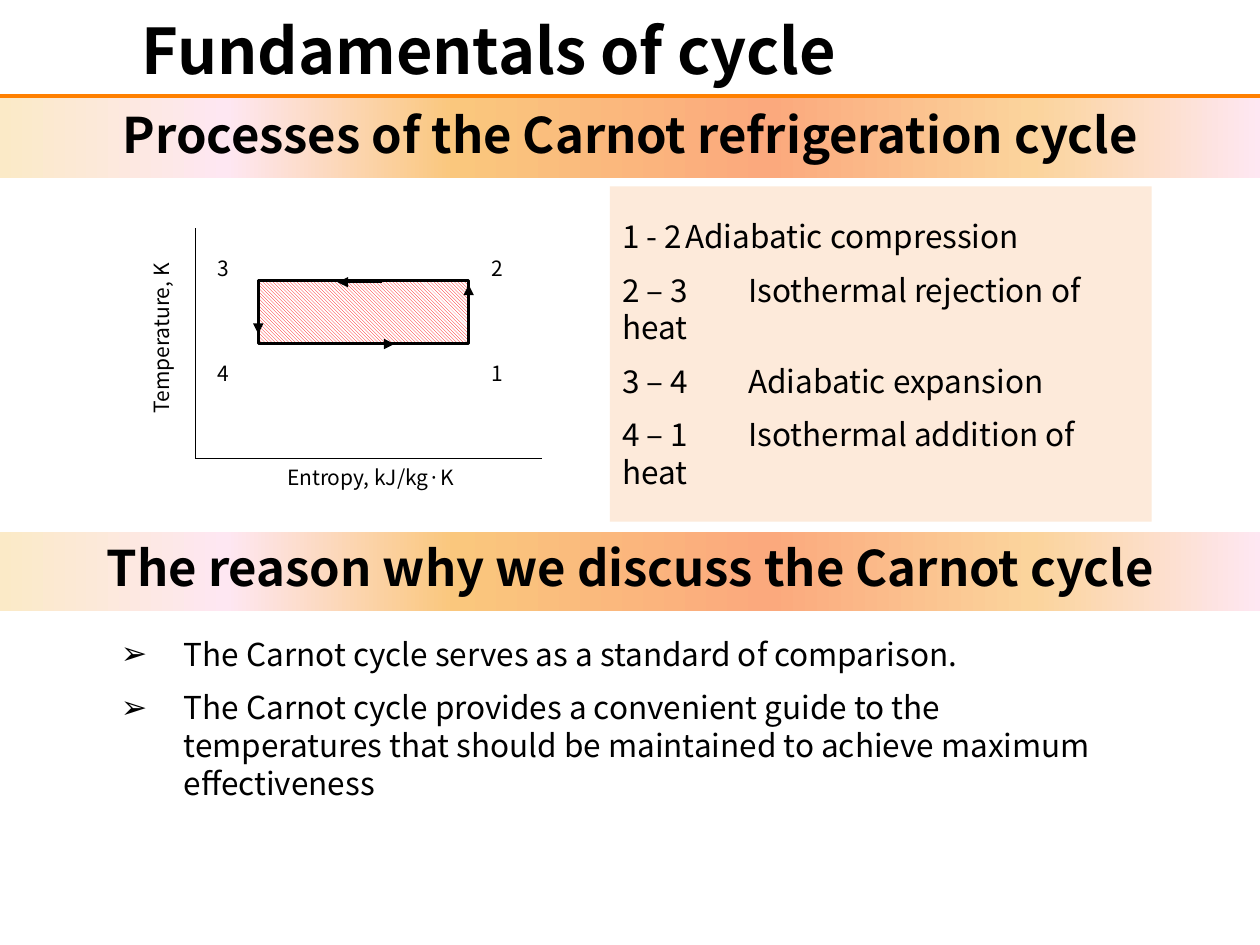
from lxml.etree import SubElement as Sub
from pptx import Presentation
from pptx.dml.color import RGBColor as RGB
from pptx.enum.dml import MSO_PATTERN as Hatch
from pptx.enum.shapes import MSO_CONNECTOR as Conn, MSO_SHAPE as Kind
from pptx.enum.text import MSO_ANCHOR as Anchor, MSO_AUTO_SIZE as Auto, PP_ALIGN as Align
from pptx.oxml.ns import qn
from pptx.util import Inches, Pt

THEME = {
    "font": "Noto Sans CJK KR",
    "ink": "000000", "paper": "FFFFFF", "rule": "FF8000", "hatch": "FF0000", "panel": "FDEADA",
    "band": [(0, "FBEAC7"), (18, "FEE7F2"), (36, "FAC77D"),
             (61, "FBA97D"), (82, "FBD49C"), (100, "FEE7F2")],
    "title": 36, "head": 28, "text": 18, "label": 12,
}
TITLE = "Fundamentals of cycle"
HEADS = ["Processes of the Carnot refrigeration cycle",
         "The reason why we discuss the Carnot cycle"]
STEPS = [("1 - 2", "Adiabatic compression"),
         ("2 – 3", "Isothermal rejection of heat"),
         ("3 – 4", "Adiabatic expansion"),
         ("4 – 1", "Isothermal addition of heat")]
REASONS = ["The Carnot cycle serves as a standard of comparison.",
           "The Carnot cycle provides a convenient guide to the temperatures that "
           "should be maintained to achieve maximum effectiveness"]

LEFT, TOP, WIDE, HIGH = 2.05, 2.23, 1.67, 0.5
RIGHT, BASE = LEFT + WIDE, TOP + HIGH
AXES = [((1.55, 1.81), (1.55, 3.64)), ((1.55, 3.64), (4.3, 3.64))]
FLOWS = [((RIGHT, 2.59), (RIGHT, 2.26)), ((3.03, TOP + 0.01), (2.68, TOP + 0.01)),
         ((2.78, BASE), (3.13, BASE)), ((LEFT, 2.32), (LEFT, 2.65))]
LABELS = [("Entropy, kJ/kg·K", (2.18, 3.64, 1.56, 0.3)),
          ("1", (3.8, 2.81, 0.42, 0.3)), ("2", (3.8, 1.98, 0.42, 0.3)),
          ("3", (1.63, 1.98, 0.42, 0.3)), ("4", (1.63, 2.81, 0.42, 0.3))]
YAXIS = ("Temperature, K", (1.13, 1.55, 0.4, 1.83))


def tint(name):
    return RGB.from_string(THEME[name])


def place(shape, box):
    shape.left, shape.top, shape.width, shape.height = map(Inches, box)


def write(shape, lines, size, align=Align.LEFT, anchor=Anchor.TOP, bold=False,
          gap=0, hang=0, mark=None, tab=None):
    frame = shape.text_frame
    frame.word_wrap, frame.auto_size = True, Auto.NONE
    frame.vertical_anchor = anchor
    for i, line in enumerate(lines):
        para = frame.add_paragraph() if i else frame.paragraphs[0]
        para.text = line
        props = para._p.get_or_add_pPr()
        props.set("marL", str(Inches(hang)))
        props.set("indent", str(-Inches(hang)))
        if mark:
            Sub(props, qn("a:buChar"), char=mark)
        else:
            Sub(props, qn("a:buNone"))
        if tab:
            Sub(Sub(props, qn("a:tabLst")), qn("a:tab"), pos=str(Inches(tab)), algn="l")
        para.alignment = align
        para.space_before = Pt(gap if i else 0)
        font = para.font
        font.name, font.size, font.bold = THEME["font"], Pt(THEME[size]), bold
        font.color.rgb = tint("ink")


def block(slide, box):
    shape = slide.shapes.add_shape(Kind.RECTANGLE, *map(Inches, box))
    shape.shadow.inherit = False
    shape.line.fill.background()
    return shape


def band(shape, text):
    shape.fill.gradient()
    shape.fill.gradient_angle = 0
    stops = shape.element.find(".//" + qn("a:gsLst"))
    for stop in list(stops):
        stops.remove(stop)
    for pos, shade in THEME["band"]:
        stop = Sub(stops, qn("a:gs"), pos=str(pos * 1000))
        Sub(stop, qn("a:srgbClr"), val=shade)
    write(shape, [text], "head", Align.CENTER, bold=True)


def label(slide, text, box):
    shape = slide.shapes.add_textbox(*map(Inches, box))
    write(shape, [text], "label")
    return shape


def draw(slide, start, end, shade="ink", width=0.75, arrow=False):
    line = slide.shapes.add_connector(Conn.STRAIGHT, *map(Inches, start + end))
    line.line.color.rgb, line.line.width = tint(shade), Pt(width)
    if arrow:
        Sub(line.line._get_or_add_ln(), qn("a:tailEnd"), type="triangle")
    Sub(line.element.spPr, qn("a:effectLst"))


def chart(slide):
    for start, end in AXES:
        draw(slide, start, end)
    cycle = block(slide, (LEFT, TOP, WIDE, HIGH))
    cycle.fill.patterned()
    cycle.fill.pattern = Hatch.LIGHT_DOWNWARD_DIAGONAL
    cycle.fill.fore_color.rgb, cycle.fill.back_color.rgb = tint("hatch"), tint("paper")
    cycle.line.color.rgb, cycle.line.width = tint("ink"), Pt(1.75)
    for text, box in LABELS:
        label(slide, text, box)
    side = label(slide, *YAXIS)
    side.text_frame._txBody.bodyPr.set("vert", "vert270")
    for start, end in FLOWS:
        draw(slide, start, end, arrow=True)


def main():
    deck = Presentation()
    deck.slide_width, deck.slide_height = Inches(10), Inches(7.5)
    slide = deck.slides.add_slide(deck.slide_layouts[3])
    title, head, body = slide.placeholders

    place(title, (0, 0, 7.76, 0.79))
    write(title, [TITLE], "title", Align.CENTER, Anchor.MIDDLE, bold=True)
    draw(slide, (0, 0.76), (10, 0.76), "rule", 2)

    place(head, (0, 0.78, 10, 0.63))
    band(head, HEADS[0])
    chart(slide)
    panel = block(slide, (4.84, 1.48, 4.3, 2.66))
    panel.fill.solid()
    panel.fill.fore_color.rgb = tint("panel")
    write(panel, ["\t".join(step) for step in STEPS], "text",
          anchor=Anchor.MIDDLE, gap=9, tab=0.63)

    band(block(slide, (0, 4.22, 10, 0.63)), HEADS[1])
    place(body, (0.86, 4.92, 8.2, 1.56))
    write(body, REASONS, "text", anchor=Anchor.MIDDLE, gap=9, hang=0.5, mark="➢")
    deck.save("out.pptx")


if __name__ == "__main__":
    main()
